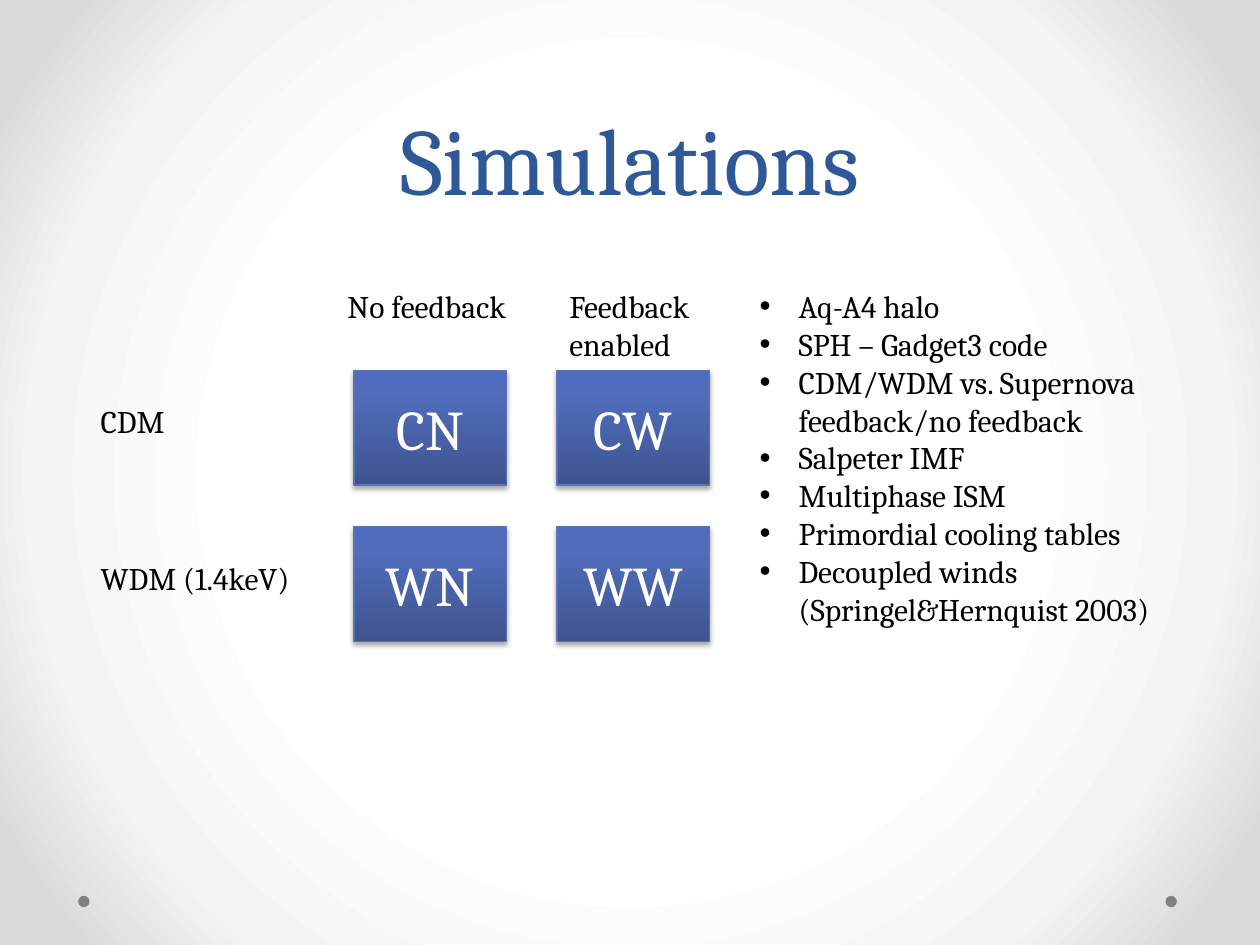
"""Build the Simulations slide: a two-by-two grid of runs with a list of model details."""
import dataclasses
import typing

import lxml.etree
import pptx
import pptx.dml.color
import pptx.enum.shapes
import pptx.enum.text
import pptx.oxml.ns
import pptx.util

Inches = pptx.util.Inches
Pt = pptx.util.Pt
qn = pptx.oxml.ns.qn
SHAPE = pptx.enum.shapes.MSO_SHAPE
ALIGN = pptx.enum.text.PP_ALIGN
ANCHOR = pptx.enum.text.MSO_ANCHOR
AUTO = pptx.enum.text.MSO_AUTO_SIZE

COLORS = {
    "title": "2F5897",
    "text": "000000",
    "box_text": "FFFFFF",
    "box_line": "5C72B2",
    "dot": "808080",
    "shadow": "000000",
}
BACKGROUND_STOPS = {50: "FFFFFF", 76: "F4F4F4", 92: "DADADA"}
BOX_STOPS = {0: "3E5490", 80: "516DBB", 100: "4F6CBE"}
FONT = "Cambria"
COLUMNS = (2.81, 4.42)
ROWS = (2.94, 4.18)
RUNS = (("CN", "CW"), ("WN", "WW"))
DETAILS = (
    "Aq-A4 halo",
    "SPH – Gadget3 code",
    "CDM/WDM vs. Supernova feedback/no feedback",
    "Salpeter IMF",
    "Multiphase ISM",
    "Primordial cooling tables",
    "Decoupled winds (Springel&Hernquist 2003)",
)


@dataclasses.dataclass
class Label:
    lines: tuple[str, ...]
    left: float
    top: float
    width: float
    height: float
    size: int = 18
    color: str = "text"
    bullets: bool = False
    frame: dict[str, typing.Any] = dataclasses.field(
        default_factory=lambda: {"auto_size": AUTO.SHAPE_TO_FIT_TEXT}
    )
    para: dict[str, typing.Any] = dataclasses.field(default_factory=dict)


LABELS = (
    Label(("Simulations",), 0.5, 0, 9, 1.75, 54, "title",
          frame={"vertical_anchor": ANCHOR.BOTTOM},
          para={"alignment": ALIGN.CENTER, "line_spacing": Pt(58)}),
    Label(("CDM",), 0.7, 3.14, 1.63, 0.4),
    Label(("WDM (1.4keV)",), 0.7, 4.39, 1.88, 0.4),
    Label(("No feedback",), 2.66, 2.23, 1.76, 0.4),
    Label(("Feedback enabled",), 4.42, 2.23, 1.51, 0.71),
    Label(DETAILS, 5.93, 2.23, 3.73, 3.13, bullets=True),
)


def rgb(name: str) -> pptx.dml.color.RGBColor:
    return pptx.dml.color.RGBColor.from_string(COLORS[name])


def add_node(parent, tag: str, **attrs: typing.Any):
    values = {key: str(value) for key, value in attrs.items()}
    return lxml.etree.SubElement(parent, qn(tag), values)


def apply(target, values: dict[str, typing.Any]) -> None:
    for name, value in values.items():
        setattr(target, name, value)


def set_gradient(props, stops: dict[int, str], angle: int | None = None) -> None:
    solid = props.find(qn("a:solidFill"))
    grad = lxml.etree.Element(qn("a:gradFill"), {"rotWithShape": "1"})
    gs_list = add_node(grad, "a:gsLst")
    for pos, color in stops.items():
        gs = add_node(gs_list, "a:gs", pos=pos * 1000)
        add_node(gs, "a:srgbClr", val=color)
    if angle is None:
        circle = add_node(grad, "a:path", path="circle")
        add_node(circle, "a:fillToRect", l=50000, t=50000, r=50000, b=50000)
    else:
        add_node(grad, "a:lin", ang=angle * 60000, scaled=0)
    props.replace(solid, grad)


def add_shadow(shape) -> None:
    effects = shape._element.spPr.find(qn("a:effectLst"))
    shadow = add_node(effects, "a:outerShdw", blurRad=Pt(3.1), dist=Pt(1.8),
                      dir=90 * 60000, rotWithShape=0)
    color = add_node(shadow, "a:srgbClr", val=COLORS["shadow"])
    add_node(color, "a:alpha", val=35000)


def add_bullet(p) -> None:
    ppr = p._p.get_or_add_pPr()
    ppr.set("marL", str(Inches(0.31)))
    ppr.set("indent", str(-Inches(0.31)))
    add_node(ppr, "a:buFont", typeface="Arial")
    add_node(ppr, "a:buChar", char="•")


def add_run(p, text: str, size: int, color: str) -> None:
    r = p.add_run()
    r.text = text
    apply(r.font, {"name": FONT, "size": Pt(size)})
    r.font.color.rgb = rgb(color)


def add_shape(s, kind, left: float, top: float, width: float, height: float):
    sp = s.shapes.add_shape(kind, Inches(left), Inches(top), Inches(width), Inches(height))
    sp.shadow.inherit = False
    sp.fill.solid()
    return sp


def add_dot(s, left: float) -> None:
    sp = add_shape(s, SHAPE.OVAL, left, 7.11, 0.09, 0.09)
    sp.fill.fore_color.rgb = rgb("dot")
    sp.line.fill.background()


def add_box(s, text: str, left: float, top: float) -> None:
    sp = add_shape(s, SHAPE.RECTANGLE, left, top, 1.21, 0.91)
    set_gradient(sp._element.spPr, BOX_STOPS, 270)
    sp.line.color.rgb = rgb("box_line")
    sp.line.width = Pt(0.75)
    add_shadow(sp)
    tf = sp.text_frame
    tf.vertical_anchor = ANCHOR.MIDDLE
    p = tf.paragraphs[0]
    p.alignment = ALIGN.CENTER
    add_run(p, text, 32, "box_text")


def add_label(s, label: Label) -> None:
    sp = s.shapes.add_textbox(Inches(label.left), Inches(label.top),
                              Inches(label.width), Inches(label.height))
    tf = sp.text_frame
    apply(tf, {"word_wrap": True, **label.frame})
    for i, line in enumerate(label.lines):
        p = tf.add_paragraph() if i else tf.paragraphs[0]
        apply(p, label.para)
        if label.bullets:
            add_bullet(p)
        add_run(p, line, label.size, label.color)


def main() -> None:
    prs = pptx.Presentation()
    apply(prs, {"slide_width": Inches(10), "slide_height": Inches(7.5)})
    s = prs.slides.add_slide(prs.slide_layouts[6])
    s.background.fill.solid()
    set_gradient(s._element.find(".//" + qn("p:bgPr")), BACKGROUND_STOPS)
    for left in (9.25, 0.62):
        add_dot(s, left)
    for top, names in zip(ROWS, RUNS):
        for left, name in zip(COLUMNS, names):
            add_box(s, name, left, top)
    for label in LABELS:
        add_label(s, label)
    prs.save("out.pptx")


if __name__ == "__main__":
    main()
